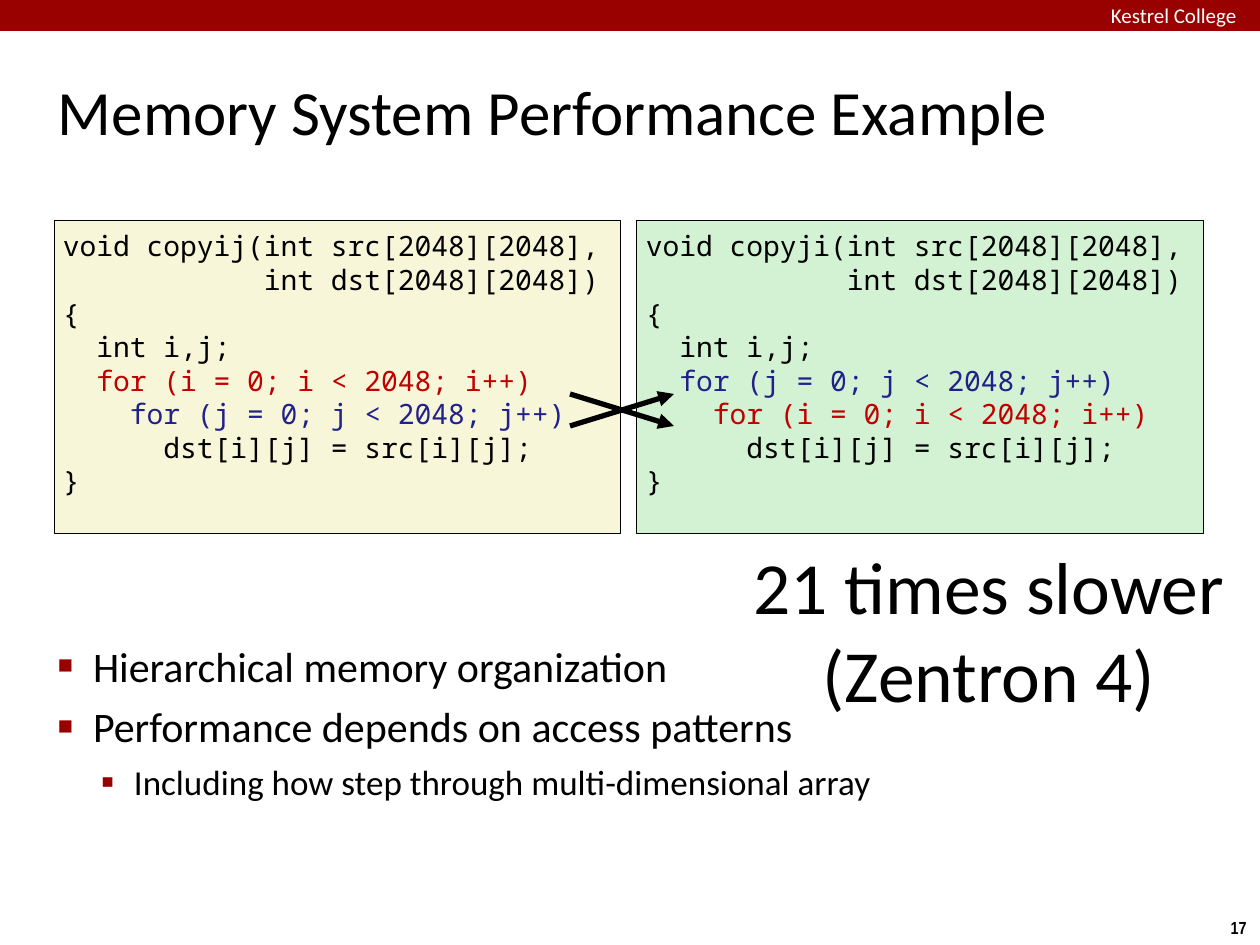
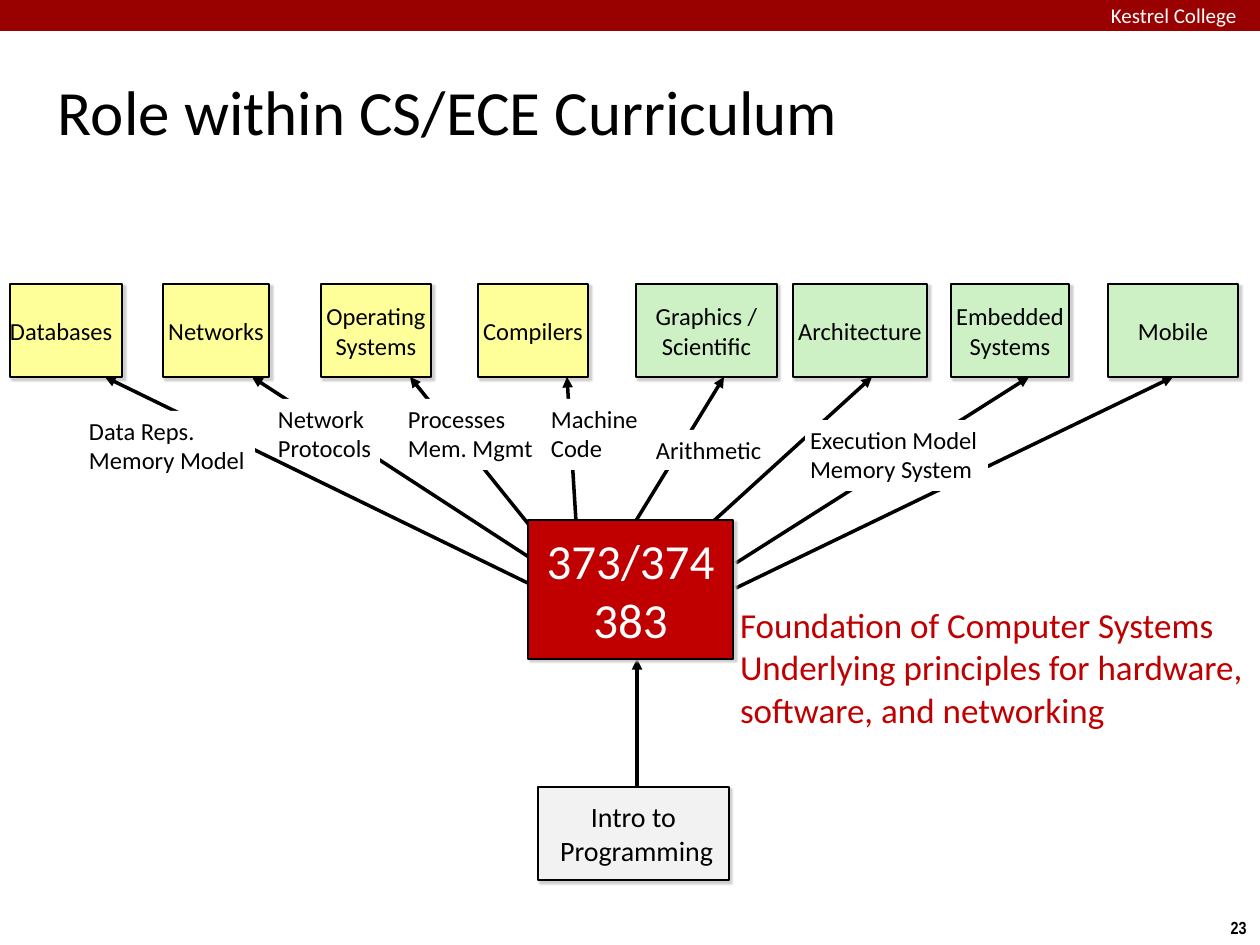
"""Build two course slides: a memory performance example and a curriculum map."""
import lxml.etree
import pptx
import pptx.dml.color
import pptx.enum.shapes
import pptx.enum.text
import pptx.oxml.ns
import pptx.util

COLORS = {"band": "990000", "black": "000000", "white": "FFFFFF", "red": "C00000",
          "navy": "21218A", "cream": "F8F6D9", "mint": "D3F2D3", "yellow": "FFFF99",
          "green": "CDF1C5", "gray": "F2F2F2", "shadow": "C0C0C0"}
SANS, MONO, NARROW = "Calibri", "Noto Sans Mono", "Arial Narrow"
ALIGN = pptx.enum.text.PP_ALIGN
ANCHOR = pptx.enum.text.MSO_ANCHOR
FIT = pptx.enum.text.MSO_AUTO_SIZE

SCHOOL = "Kestrel College"
MEMORY = {"title": "Memory System Performance Example", "number": "17"}
CODE = [("copyij", "ij", "cream", 54), ("copyji", "ji", "mint", 637)]
LOOP_COLORS = {"i": "red", "j": "navy"}
SWAP_ROWS = (394, 426)
SLOWER = "21 times slower\n(Zentron 4)"
BULLETS = [(0, "Hierarchical memory organization"),
           (0, "Performance depends on access patterns"),
           (1, "Including how step through multi-dimensional array")]
LEVELS = [{"margin": 35, "hang": 35, "char": "■", "percent": 60, "size": 24, "before": 6},
          {"margin": 76, "hang": 33, "char": "▪", "percent": 110, "size": 20, "before": 5}]

ROLE = {"title": "Role within CS/ECE Curriculum", "number": "23"}
# name, width, colour, arrow tip x, arrow tail, label, label box
COURSES = [
    ("Databases", 112, "yellow", 105, (538, 588), "Data Reps.\nMemory Model", (84, 411, 171, 71)),
    ("Networks", 106, "yellow", 252, (538, 563), "Network\nProtocols", (273, 399, 107, 71)),
    ("Operating\nSystems", 110, "yellow", 410, (538, 536), "Processes\nMem. Mgmt", (403, 399, 139, 71)),
    ("Compilers", 110, "yellow", 567, (577, 537), "Machine\nCode", (546, 399, 101, 71)),
    ("Graphics /\nScientific", 141, "green", 724, (626, 537), "Arithmetic", (651, 430, 120, 40)),
    ("Architecture", 134, "green", 872, (696, 537), "", None),
    ("Embedded\nSystems", 118, "green", 1029, (736, 563), "", None),
    ("Mobile", 130, "green", 1174, (736, 588), "Execution Model\nMemory System", (805, 420, 183, 71)),
]
DRAW_ORDER = [3, 2, 1, 0, 4, 5, 6, 7]
COURSE_TOP, COURSE_HEIGHT = 284, 93
HUB = ("373/374\n383", (528, 520, 205, 139))
INTRO = ("Intro to\n Programming", (538, 787, 191, 93))
FOUNDATION = ("Foundation of Computer Systems\nUnderlying principles for hardware,\n"
              "software, and networking")


def px(n):
    return pptx.util.Emu(round(n * 914400 / 126))


def rgb(name):
    return pptx.dml.color.RGBColor.from_string(COLORS[name])


def add_xml(parent, tag, **attrs):
    return lxml.etree.SubElement(parent, pptx.oxml.ns.qn(tag), attrs)


def style(p, size, color="black", font=SANS, align=ALIGN.LEFT, bold=False):
    p.alignment = align
    p.font.size = pptx.util.Pt(size)
    p.font.name = font
    p.font.bold = bold
    p.font.color.rgb = rgb(color)


def set_frame(tf, inset, anchor=ANCHOR.TOP, wrap=True, grow=False):
    tf.margin_left = tf.margin_right = tf.margin_top = tf.margin_bottom = px(inset)
    tf.vertical_anchor = anchor
    tf.word_wrap = wrap
    tf.auto_size = FIT.SHAPE_TO_FIT_TEXT if grow else FIT.NONE


def write(sp, text, size, inset=5, anchor=ANCHOR.TOP, wrap=True, grow=False, **look):
    tf = sp.text_frame
    set_frame(tf, inset, anchor, wrap, grow)
    tf.text = text
    for p in tf.paragraphs:
        style(p, size, **look)


def add_text(s, box, text, size, **options):
    sp = s.shapes.add_textbox(*map(px, box))
    write(sp, text, size, **options)
    return sp


def add_box(s, box, fill, line=0, shadow=False):
    sp = s.shapes.add_shape(pptx.enum.shapes.MSO_SHAPE.RECTANGLE, *map(px, box))
    sp.fill.solid()
    sp.fill.fore_color.rgb = rgb(fill)
    if line:
        sp.line.color.rgb = rgb("black")
        sp.line.width = pptx.util.Pt(line)
    else:
        sp.line.fill.background()
    sp.shadow.inherit = False
    if shadow:
        effects = sp._element.spPr.find(pptx.oxml.ns.qn("a:effectLst"))
        outer = add_xml(effects, "a:outerShdw", blurRad="12700", dist="25400",
                        dir="2700000", algn="ctr", rotWithShape="0")
        tint = add_xml(outer, "a:srgbClr", val=COLORS["shadow"])
        add_xml(tint, "a:alpha", val="75000")
    return sp


def add_node(s, box, text, fill, size=14, **options):
    sp = add_box(s, box, fill, 1, shadow=True)
    write(sp, text, size, **{"inset": 0, "anchor": ANCHOR.MIDDLE, "wrap": False,
                             "align": ALIGN.CENTER, **options})
    return sp


def add_arrow(s, tip, tail, width):
    c = s.shapes.add_connector(pptx.enum.shapes.MSO_CONNECTOR.STRAIGHT, *map(px, tip + tail))
    c.line.color.rgb = rgb("black")
    c.line.width = pptx.util.Pt(width)
    add_xml(c.line._ln, "a:headEnd", type="triangle")
    add_xml(c._element.spPr, "a:effectLst")
    return c


def place(sp, box):
    sp.left, sp.top, sp.width, sp.height = map(px, box)


def set_indent(p, margin, hang):
    pPr = p._p.get_or_add_pPr()
    pPr.set("marL", str(px(margin)))
    pPr.set("indent", str(-px(hang)))
    return pPr


def add_slide(prs, layout, title, number):
    s = prs.slides.add_slide(prs.slide_layouts[layout])
    place(s.shapes.title, (53, 35, 1155, 150))
    write(s.shapes.title, title, 36, anchor=ANCHOR.MIDDLE)
    set_indent(s.shapes.title.text_frame.paragraphs[0], 16, 16)
    add_box(s, (0, 0, 1260, 31), "band")
    add_text(s, (1111, 3, 149, 24), SCHOOL, 12, inset=0, wrap=False, color="white")
    add_text(s, (1217, 911, 43, 34), number, 10, inset=6, wrap=False,
             font=NARROW, bold=True, align=ALIGN.CENTER)
    return s


def add_bullets(sp):
    place(sp, (53, 635, 1155, 306))
    tf = sp.text_frame
    set_frame(tf, 5)
    for n, (level, text) in enumerate(BULLETS):
        p = tf.add_paragraph() if n else tf.paragraphs[0]
        look = LEVELS[level]
        p.text = text
        p.level = level
        p.space_before = pptx.util.Pt(look["before"])
        pPr = set_indent(p, look["margin"], look["hang"])
        add_xml(add_xml(pPr, "a:buClr"), "a:srgbClr", val=COLORS["band"])
        add_xml(pPr, "a:buSzPct", val=str(look["percent"] * 1000))
        add_xml(pPr, "a:buChar", char=look["char"])
        style(p, look["size"])


def add_code(s, name, loops, fill, left):
    head = f"void {name}("
    fors = [f"{'  ' * depth}for ({v} = 0; {v} < 2048; {v}++)"
            for depth, v in enumerate(loops, 1)]
    lines = [head + "int src[2048][2048],", " " * 12 + "int dst[2048][2048])", "{",
             "  int i,j;", *fors, "      dst[i][j] = src[i][j];", "}"]
    sp = add_box(s, (left, 220, 567, 314), fill, 0.5)
    write(sp, "\n".join(lines), 16, inset=9, font=MONO)
    for p, v in zip(sp.text_frame.paragraphs[4:], loops):
        p.font.color.rgb = rgb(LOOP_COLORS[v])


def build_memory(prs):
    s = add_slide(prs, 1, **MEMORY)
    add_bullets(s.placeholders[1])
    for block in CODE:
        add_code(s, *block)
    for start, end in (SWAP_ROWS, SWAP_ROWS[::-1]):
        add_arrow(s, (674, end), (570, start), 3)
    sp = add_text(s, (733, 536, 512, 189), "", 42, wrap=False, grow=True)
    p = sp.text_frame.paragraphs[0]
    p.text = SLOWER
    p.alignment = ALIGN.CENTER


def build_role(prs):
    s = add_slide(prs, 5, **ROLE)
    for n in DRAW_ORDER:
        name, width, fill, tip, tail, label, label_box = COURSES[n]
        left = max(10, 6 + 315 * n // 2)
        align = ALIGN.CENTER if n else ALIGN.LEFT
        node = add_node(s, (left, COURSE_TOP, width, COURSE_HEIGHT), name, fill, align=align)
        c = add_arrow(s, (tip, COURSE_TOP + COURSE_HEIGHT), tail, 2)
        if abs(left + width / 2 - tip) <= 2:
            c.begin_connect(node, 2)
        if label:
            write(add_box(s, label_box, "white"), label, 14, wrap=False, grow=True)
    sp = add_text(s, (735, 599, 525, 136), "", 20, color="red")
    p = sp.text_frame.paragraphs[0]
    p.text = FOUNDATION
    p.space_before = pptx.util.Pt(4.8)
    add_arrow(s, (637, 659), (637, 787), 2)
    add_node(s, INTRO[1], INTRO[0], "gray", 16, inset=5)
    add_node(s, HUB[1], HUB[0], "red", 28, wrap=True, color="white")


def main():
    prs = pptx.Presentation()
    prs.slide_width, prs.slide_height = px(1260), px(945)
    build_memory(prs)
    build_role(prs)
    prs.save("out.pptx")


if __name__ == "__main__":
    main()
